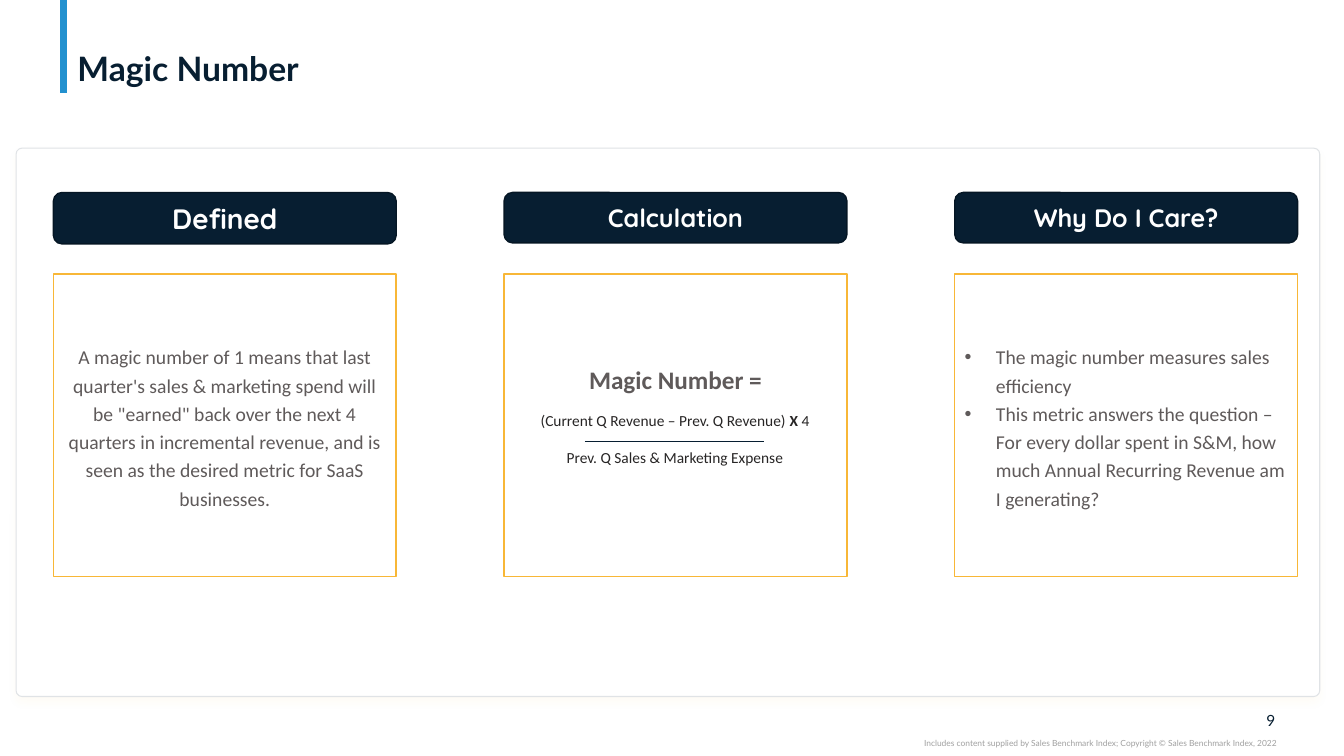
from dataclasses import dataclass

from lxml import etree
from pptx import Presentation
from pptx.dml.color import RGBColor
from pptx.enum.shapes import MSO_CONNECTOR, MSO_SHAPE
from pptx.enum.text import MSO_ANCHOR, PP_ALIGN
from pptx.oxml.ns import qn
from pptx.util import Inches, Pt

RECTANGLE, ROUNDED = MSO_SHAPE.RECTANGLE, MSO_SHAPE.ROUNDED_RECTANGLE
STRAIGHT = MSO_CONNECTOR.STRAIGHT
TOP, MIDDLE, BOTTOM = MSO_ANCHOR.TOP, MSO_ANCHOR.MIDDLE, MSO_ANCHOR.BOTTOM
LEFT, CENTER, RIGHT = PP_ALIGN.LEFT, PP_ALIGN.CENTER, PP_ALIGN.RIGHT

COLORS = {
    "navy": "071E31", "navy_edge": "051624", "blue": "2391CF",
    "amber": "F8B737", "white": "FFFFFF", "panel_edge": "E0E3E6",
    "body": "5F5A5A", "formula": "272525", "credit": "A0A0A0",
}
COLUMN_LEFT, COLUMN_PITCH, COLUMN_WIDTH = 0.53, 4.47, 3.4
HEADER_TOP, CARD_TOP, CARD_HEIGHT = 1.91, 2.72, 3
BULLET_INDENT = 0.31


@dataclass
class TextStyle:
    font: str
    size: float
    color: str
    bold: bool = False
    align: PP_ALIGN = CENTER
    anchor: MSO_ANCHOR = MIDDLE
    line_spacing: float | None = None
    space_before: float = 0
    bullet: bool = False
    insets: tuple[float, float, float, float] = (0.1, 0.05, 0.1, 0.05)


@dataclass
class Column:
    header: str
    header_size: float
    header_height: float
    lines: list[str]
    style: TextStyle


@dataclass
class Label:
    area: tuple[float, float, float, float]
    lines: list[str]
    style: TextStyle


COLUMNS = [
    Column("Defined", 20, 0.51, [
        "A magic number of 1 means that last quarter's sales & marketing spend "
        "will be \"earned\" back over the next 4 quarters in incremental revenue, "
        "and is seen as the desired metric for SaaS businesses.",
    ], TextStyle("Calibri", 14, "body", line_spacing=1.2)),
    Column("Calculation", 18, 0.5, ["Magic Number ="],
           TextStyle("Calibri", 18, "body", bold=True, insets=(0.1, 0.05, 0.1, 0.97))),
    Column("Why Do I Care?", 18, 0.5, [
        "The magic number measures sales efficiency",
        "This metric answers the question – For every dollar spent in S&M, "
        "how much Annual Recurring Revenue am I generating?",
    ], TextStyle("Calibri", 14, "body", align=LEFT, line_spacing=1.2, bullet=True)),
]

NO_INSETS = (0, 0, 0, 0)
LABELS = [
    Label((0.67, 0.04, 11.99, 0.84), ["Magic Number"],
          TextStyle("Lato", 24, "navy", True, LEFT, BOTTOM, 0.9, insets=(0.1, 0, 0.1, 0))),
    Label((12.32, 7.05, 0.33, 0.19), ["9"],
          TextStyle("Lato", 11, "navy", align=RIGHT, insets=NO_INSETS)),
    Label((7.5, 7.32, 5.16, 0.1),
          ["Includes content supplied by Sales Benchmark Index; "
           "Copyright © Sales Benchmark Index, 2022"],
          TextStyle("Lato", 6, "credit", align=RIGHT, anchor=TOP, insets=NO_INSETS)),
    # The gap between the two lines holds the fraction bar
    Label((4.46, 4.03, 4.47, 0.66),
          ["(Current Q Revenue – Prev. Q Revenue) **X** 4",
           "Prev. Q Sales & Marketing Expense"],
          TextStyle("Calibri", 11, "formula", anchor=TOP, space_before=13.4)),
]


def rgb(name: str) -> RGBColor:
    return RGBColor.from_string(COLORS[name])


def set_values(target, values: dict) -> None:
    for name, value in values.items():
        setattr(target, name, value)


def add_bullet(para) -> None:
    properties = para._p.get_or_add_pPr()
    properties.set("marL", str(Inches(BULLET_INDENT)))
    properties.set("indent", str(-Inches(BULLET_INDENT)))
    etree.SubElement(properties, qn("a:buFont")).set("typeface", "Arial")
    etree.SubElement(properties, qn("a:buChar")).set("char", "•")


def write_text(box, lines: list[str], style: TextStyle) -> None:
    """Fill a box with paragraphs; text between ** marks is bold."""
    frame = box.text_frame
    left, top, right, bottom = map(Inches, style.insets)
    set_values(frame, {
        "word_wrap": True, "vertical_anchor": style.anchor,
        "margin_left": left, "margin_top": top,
        "margin_right": right, "margin_bottom": bottom,
    })
    for index, line in enumerate(lines):
        para = frame.add_paragraph() if index else frame.paragraphs[0]
        set_values(para, {"alignment": style.align, "line_spacing": style.line_spacing})
        if index and style.space_before:
            para.space_before = Pt(style.space_before)
        if style.bullet:
            add_bullet(para)
        for part, words in enumerate(line.split("**")):
            span = para.add_run()
            span.text = words
            set_values(span.font, {
                "name": style.font, "size": Pt(style.size),
                "bold": style.bold or part % 2 == 1,
            })
            span.font.color.rgb = rgb(style.color)


def add_box(page, kind: MSO_SHAPE, area: tuple, fill: str, edge: str, weight: float):
    box = page.shapes.add_shape(kind, *map(Inches, area))
    box.shadow.inherit = False
    box.fill.solid()
    box.fill.fore_color.rgb = rgb(fill)
    box.line.color.rgb = rgb(edge)
    box.line.width = Pt(weight)
    return box


def add_line(page, start: tuple, end: tuple, color: str, weight: float) -> None:
    line = page.shapes.add_connector(STRAIGHT, *map(Inches, start + end))
    line.line.color.rgb = rgb(color)
    line.line.width = Pt(weight)
    etree.SubElement(line._element.spPr, qn("a:effectLst"))


def add_panel(page) -> None:
    panel = add_box(page, ROUNDED, (0.16, 1.47, 12.93, 5.44), "white", "panel_edge", 0.75)
    panel.adjustments[0] = 0.011
    effects = panel._element.spPr.find(qn("a:effectLst"))
    shadow = etree.SubElement(effects, qn("a:outerShdw"), {
        "blurRad": str(Pt(6)), "dist": str(Pt(4)), "dir": "5400000", "rotWithShape": "0",
    })
    color = etree.SubElement(shadow, qn("a:srgbClr"), val=COLORS["amber"])
    etree.SubElement(color, qn("a:alpha"), val="4000")


def add_column(page, left: float, column: Column) -> None:
    header_area = (left, HEADER_TOP, COLUMN_WIDTH, column.header_height)
    header = add_box(page, ROUNDED, header_area, "navy", "navy_edge", 1)
    write_text(header, [column.header],
               TextStyle("Quicksand", column.header_size, "white", bold=True))
    card_area = (left, CARD_TOP, COLUMN_WIDTH, CARD_HEIGHT)
    card = add_box(page, RECTANGLE, card_area, "white", "amber", 1)
    write_text(card, column.lines, column.style)


def main() -> None:
    deck = Presentation()
    set_values(deck, {"slide_width": Inches(13.33), "slide_height": Inches(7.5)})
    page = deck.slides.add_slide(deck.slide_layouts[6])

    # Accent bar and panel
    add_line(page, (0.63, 0), (0.63, 0.92), "blue", 5)
    add_panel(page)

    # Three columns of header and card
    for index, column in enumerate(COLUMNS):
        add_column(page, COLUMN_LEFT + index * COLUMN_PITCH, column)

    # Title, footer and formula, then the fraction bar
    for label in LABELS:
        box = page.shapes.add_textbox(*map(Inches, label.area))
        write_text(box, label.lines, label.style)
    add_line(page, (5.8, 4.38), (7.58, 4.38), "navy", 0.25)

    deck.save("out.pptx")


if __name__ == "__main__":
    main()
